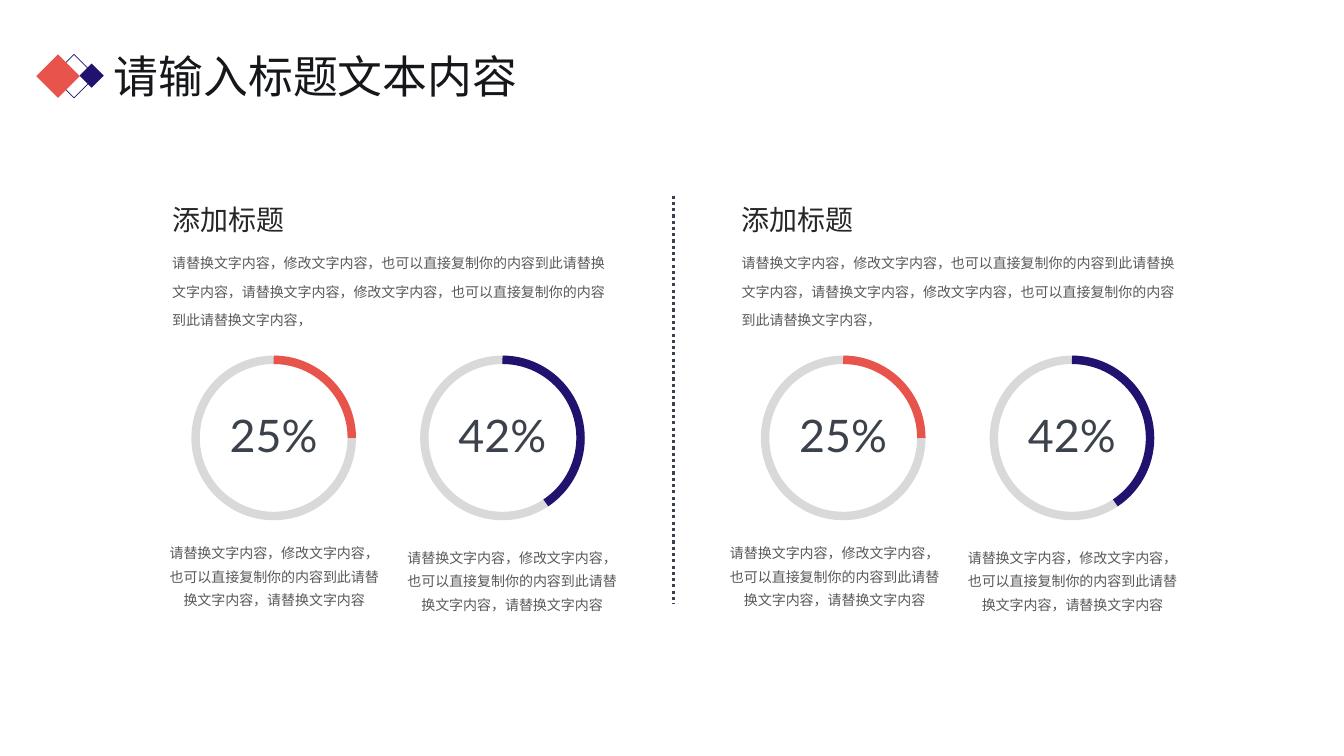
from dataclasses import dataclass
from typing import Optional

from lxml.etree import SubElement
from pptx import Presentation
from pptx.dml.color import RGBColor
from pptx.enum.dml import MSO_LINE
from pptx.enum.lang import MSO_LANGUAGE_ID as Language
from pptx.enum.shapes import MSO_CONNECTOR, MSO_SHAPE
from pptx.enum.text import MSO_AUTO_SIZE, PP_ALIGN as Align
from pptx.oxml.ns import qn
from pptx.shapes.autoshape import Shape
from pptx.slide import Slide
from pptx.util import Pt


@dataclass(frozen=True)
class Theme:
    font: str = "Lato"
    coral: str = "E8534B"
    navy: str = "211270"
    track: str = "D9D9D9"
    slate: str = "3B424B"
    title: str = "15171B"
    heading: str = "262626"
    body: str = "595959"
    large: float = 32
    medium: float = 20
    small: float = 10


@dataclass(frozen=True)
class Diamond:
    left: float
    top: float
    size: float
    fill: Optional[str] = None


@dataclass(frozen=True)
class Gauge:
    label: str
    color: str
    end_angle: float
    caption_top: float


@dataclass(frozen=True)
class Panel:
    left: float
    caption_left: float


THEME = Theme()
HEADING = "添加标题"
CAPTION = "请替换文字内容，修改文字内容，也可以直接复制你的内容到此请替换文字内容，请替换文字内容"
INTRO = (
    "请替换文字内容，修改文字内容，也可以直接复制你的内容到此请替换文字内容，"
    "请替换文字内容，修改文字内容，也可以直接复制你的内容到此请替换文字内容，"
)

DIAMONDS = [
    Diamond(37.4, 38.9, 31),
    Diamond(25.9, 38.9, 31, THEME.coral),
    Diamond(56.9, 45.4, 17.3, THEME.navy),
]
GAUGES = [
    Gauge("25%", THEME.coral, 0, 380.9),
    Gauge("42%", THEME.navy, 56.28, 383.8),
]
PANELS = [Panel(115.9, 110.9), Panel(522.7, 511.2)]

RING_SIZE = 111.6
RING_TOP = 257
RING_INDENT = 23.8
RING_STEP = 163.4
CAPTION_WIDTH = 169.9


def rgb(color: str) -> RGBColor:
    return RGBColor.from_string(color)


def add_text(slide: Slide, text: str, left: float, top: float, width: float,
             height: float, *, size: float, color: str,
             align: Align = Align.LEFT, spacing: Optional[float] = None) -> None:
    box = slide.shapes.add_textbox(Pt(left), Pt(top), Pt(width), Pt(height))
    frame = box.text_frame
    frame.word_wrap = True
    frame.auto_size = MSO_AUTO_SIZE.SHAPE_TO_FIT_TEXT
    paragraph = frame.paragraphs[0]
    paragraph.alignment = align
    if spacing is not None:
        paragraph.line_spacing = spacing
    run = paragraph.add_run()
    run.text = text
    font = run.font
    font.name, font.size = THEME.font, Pt(size)
    font.color.rgb = rgb(color)
    font.language_id = Language.SIMPLIFIED_CHINESE
    SubElement(font._element, qn("a:ea"), typeface=THEME.font)


def add_outline(slide: Slide, kind: MSO_SHAPE, left: float, top: float,
                size: float, color: str, weight: float) -> Shape:
    """Add an unfilled square-framed shape with a coloured line."""
    shape = slide.shapes.add_shape(kind, Pt(left), Pt(top), Pt(size), Pt(size))
    shape.shadow.inherit = False
    shape.fill.background()
    shape.line.color.rgb = rgb(color)
    shape.line.width = Pt(weight)
    return shape


def add_diamond(slide: Slide, diamond: Diamond) -> None:
    shape = add_outline(slide, MSO_SHAPE.DIAMOND, diamond.left, diamond.top,
                        diamond.size, THEME.navy, 0.5)
    if diamond.fill:
        shape.fill.solid()
        shape.fill.fore_color.rgb = rgb(diamond.fill)
        shape.line.fill.background()


def add_arc(slide: Slide, left: float, color: str, start: float, end: float) -> None:
    """Draw a ring segment clockwise between two angles in degrees."""
    arc = add_outline(slide, MSO_SHAPE.ARC, left, RING_TOP, RING_SIZE, color, 6)
    # Arc adjustments count 60000ths of a degree, scaled down by 100000.
    arc.adjustments[0] = start * 0.6
    arc.adjustments[1] = end * 0.6


def add_gauge(slide: Slide, gauge: Gauge, left: float, caption_left: float) -> None:
    add_arc(slide, left, THEME.track, 358.28, 287.7)
    add_arc(slide, left, gauge.color, 270, gauge.end_angle)
    add_text(slide, gauge.label, left, 288, RING_SIZE, 46,
             size=THEME.large, color=THEME.slate, align=Align.CENTER)
    add_text(slide, CAPTION, caption_left, gauge.caption_top, CAPTION_WIDTH, 56.9,
             size=THEME.small, color=THEME.body, align=Align.CENTER, spacing=1.4)


def add_panel(slide: Slide, panel: Panel) -> None:
    add_text(slide, HEADING, panel.left, 141.1, 98.6, 31.7,
             size=THEME.medium, color=THEME.heading, align=Align.JUSTIFY)
    add_text(slide, INTRO, panel.left, 169.9, 328.3, 67,
             size=THEME.small, color=THEME.body, spacing=1.7)
    for column, gauge in enumerate(GAUGES):
        add_gauge(slide, gauge, panel.left + RING_INDENT + column * RING_STEP,
                  panel.caption_left + column * CAPTION_WIDTH)


def add_divider(slide: Slide) -> None:
    divider = slide.shapes.add_connector(
        MSO_CONNECTOR.STRAIGHT, Pt(481), Pt(139.7), Pt(481), Pt(431.3))
    divider.line.color.rgb = rgb(THEME.slate)
    divider.line.width = Pt(2.25)
    divider.line.dash_style = MSO_LINE.ROUND_DOT
    SubElement(divider._element.spPr, qn("a:effectLst"))


def main() -> None:
    deck = Presentation()
    deck.slide_width, deck.slide_height = Pt(960), Pt(540)
    slide = deck.slides.add_slide(deck.slide_layouts[6])
    add_text(slide, "请输入标题文本内容", 74.2, 31, 308.2, 46,
             size=THEME.large, color=THEME.title, align=Align.JUSTIFY)
    for diamond in DIAMONDS:
        add_diamond(slide, diamond)
    add_divider(slide)
    for panel in PANELS:
        add_panel(slide, panel)
    deck.save("out.pptx")


if __name__ == "__main__":
    main()
